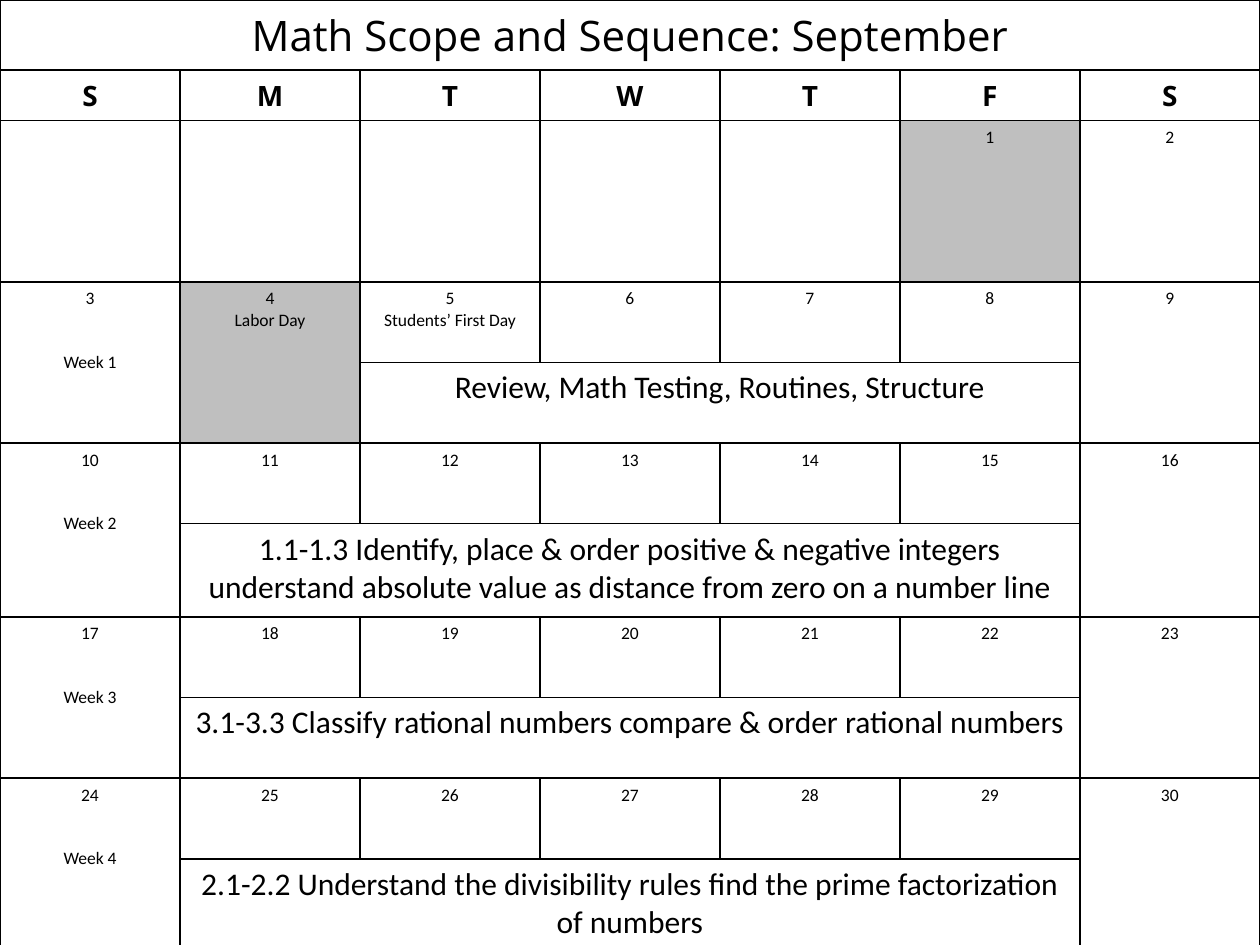
from lxml.etree import SubElement
from pptx import Presentation
from pptx.dml.color import RGBColor as RGB
from pptx.enum.text import PP_ALIGN as Align
from pptx.oxml.ns import qn
from pptx.util import Inches, Pt

COLORS = {"ink": "000000", "paper": "FFFFFF", "closed": "BFBFBF"}
HEADING, BODY = "Open Sans", "Calibri"
ROWS = [0.53, 0.39, 1.28] + [0.64, 0.64, 0.64, 0.74] * 2
DAYS, FIRST_COL, LAST_DAY = 7, 5, 30
CLOSED = {1, 4}
EVENTS = {4: "Labor Day", 5: "Students’ First Day"}
TOPICS = [
    ["Review, Math Testing, Routines, Structure"],
    ["1.1-1.3 Identify, place & order positive & negative integers",
     "understand absolute value as distance from zero on a number line"],
    ["3.1-3.3 Classify rational numbers compare & order rational numbers"],
    ["2.1-2.2 Understand the divisibility rules find the prime factorization of numbers"],
]


def style_cell(cell):
    """Give a cell black borders and a white fill."""
    tc_pr = cell._tc.get_or_add_tcPr()
    for side in ("lnL", "lnR", "lnT", "lnB"):
        ln = SubElement(tc_pr, qn(f"a:{side}"), w=str(Pt(1)))
        fill = SubElement(ln, qn("a:solidFill"))
        SubElement(fill, qn("a:srgbClr"), val=COLORS["ink"])
    paint(cell, "paper")


def paint(cell, color):
    """Fill a cell with a named colour."""
    cell.fill.solid()
    cell.fill.fore_color.rgb = RGB.from_string(COLORS[color])


def write(cell, lines, size, font=BODY, bold=False):
    """Write centred lines into a cell, one paragraph each."""
    tf = cell.text_frame
    tf.text = "\n".join(lines)
    for p in tf.paragraphs:
        p.alignment = Align.CENTER
        p.font.size, p.font.name, p.font.bold = Pt(size), font, bold
        p.font.color.rgb = RGB.from_string(COLORS["ink"])


def add_grid(slide, left, top, width, height):
    """Add the bordered calendar grid in the given box."""
    frame = slide.shapes.add_table(len(ROWS), DAYS, left, top, width, height)
    table = frame.table
    table.first_row = table.horz_banding = False
    for col in table.columns:
        col.width = width // DAYS
    for row, share in zip(table.rows, ROWS):
        row.height = Inches(share)
    for cell in table.iter_cells():
        style_cell(cell)
    return table


def fill_header(table):
    """Write the title across the top and the weekday letters below it."""
    table.cell(0, 0).merge(table.cell(0, DAYS - 1))
    write(table.cell(0, 0), ["Math Scope and Sequence: September"], 24, HEADING)
    for col, letter in enumerate("SMTWTFS"):
        write(table.cell(1, col), [letter], 16, HEADING, True)


def fill_days(table):
    """Write each date, with its event and shading, into its week."""
    for day in range(1, LAST_DAY + 1):
        week, col = divmod(day + FIRST_COL - 1, DAYS)
        row = 2 * week + 1 if week else 2
        cell = table.cell(row, col)
        lines = [str(day)]
        if day in EVENTS:
            lines.append(EVENTS[day])
        if col == 0:
            lines.append(f"Week {week}")
        write(cell, lines, 10)
        if col == 0:
            cell.text_frame.paragraphs[-1].space_before = Pt(24.4)
        if day in CLOSED:
            paint(cell, "closed")
        if week and (col in (0, DAYS - 1) or day in CLOSED):
            cell.merge(table.cell(row + 1, col))


def fill_topics(table):
    """Write each week's topic across its school days."""
    for week, lines in enumerate(TOPICS, 1):
        row, start = 2 * week + 2, 2 if week == 1 else 1
        cell = table.cell(row, start)
        cell.merge(table.cell(row, DAYS - 2))
        write(cell, lines, 18)


def main():
    """Build the calendar slide and save it."""
    prs = Presentation()
    prs.slide_width, prs.slide_height = Inches(10), Inches(7.5)
    slide = prs.slides.add_slide(prs.slide_layouts[6])
    table = add_grid(slide, 0, 0, prs.slide_width, prs.slide_height)
    fill_header(table)
    fill_days(table)
    fill_topics(table)
    prs.save("out.pptx")


if __name__ == "__main__":
    main()
